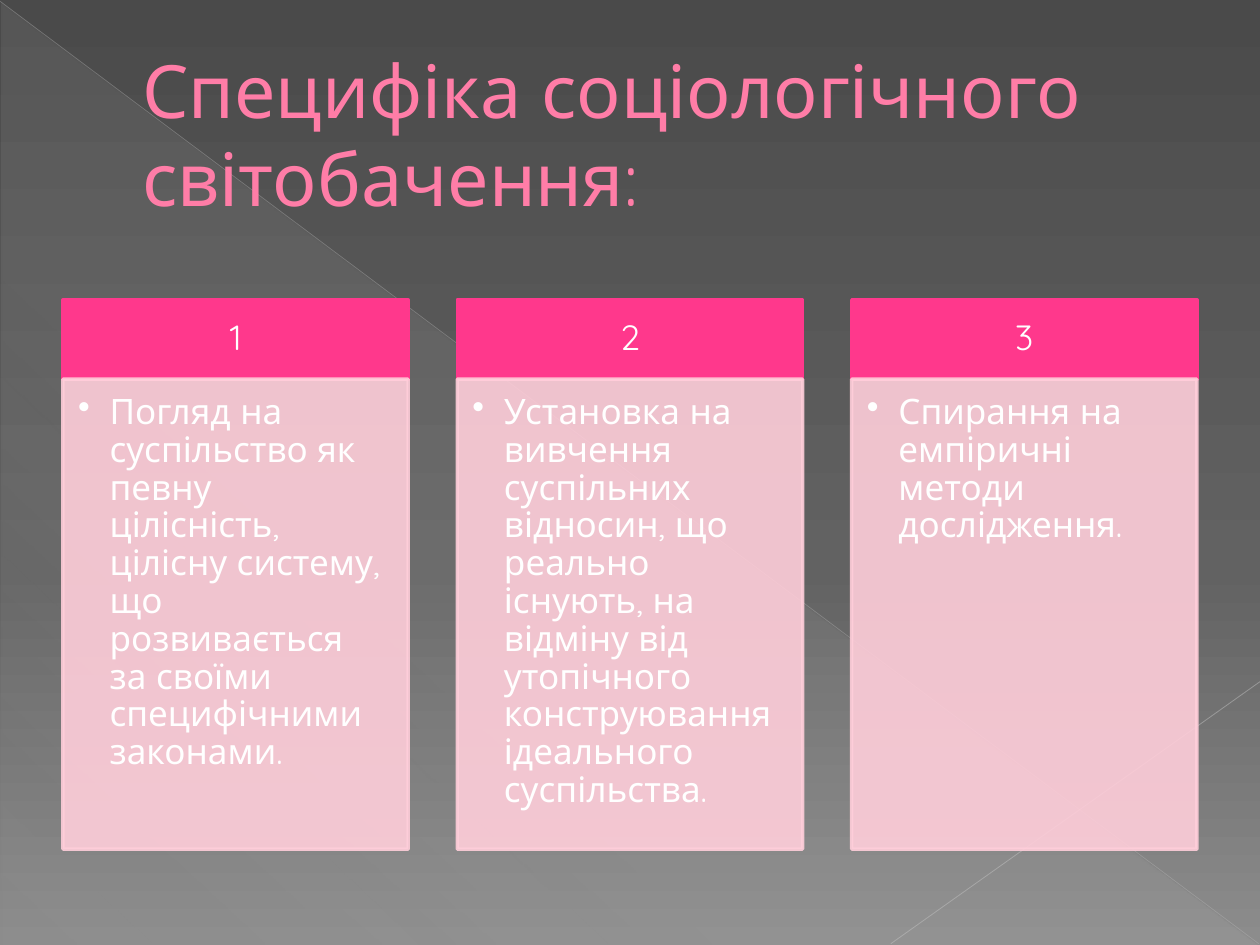
from lxml import etree
from pptx import Presentation
from pptx.dml.color import RGBColor
from pptx.enum.shapes import MSO_CONNECTOR, MSO_SHAPE
from pptx.enum.text import MSO_ANCHOR, PP_ALIGN
from pptx.oxml.ns import qn
from pptx.util import Inches, Pt

RECT, TRI = MSO_SHAPE.RECTANGLE, MSO_SHAPE.RIGHT_TRIANGLE
LINE = MSO_CONNECTOR.STRAIGHT
MID, TOP = MSO_ANCHOR.MIDDLE, MSO_ANCHOR.TOP
LEFT, CENTER = PP_ALIGN.LEFT, PP_ALIGN.CENTER

TITLE = "Специфіка соціологічного світобачення:"
CARDS = [
    ("1", "Погляд на суспільство як певну цілісність, цілісну систему, "
          "що розвивається за своїми специфічними законами."),
    ("2", "Установка на вивчення суспільних відносин, що реально існують, "
          "на відміну від утопічного конструювання ідеального суспільства."),
    ("3", "Спирання на емпіричні методи дослідження."),
]
BACK = [(0, "4A4A4A", 100), (60, "626262", 100), (100, "8C8C8C", 100)]
SHADE = [(0, "D2D2D2", 10), (70, "D2D2D2", 8), (100, "D2D2D2", 1)]
RAYS = [
    ((0, 0.01, 9.99, 7.49), "BFBFBF", 0.39, 35),
    ((10, 5.41, 7.07, 7.49), "C6C6C6", 0.47, 45),
]
FONT = "Quicksand"
W, H = 10, 7.5
EDGE, WIDE = 0.5, 2.74
STEP = (W - 2 * EDGE - WIDE) / (len(CARDS) - 1)
HEAD_Y, HEAD_H, BODY_H = 2.38, 0.63, 3.73


def rgb(code):
    return RGBColor.from_string(code)


def fade(node, share):
    for clr in node.iter(qn("a:srgbClr")):
        etree.SubElement(clr, qn("a:alpha"), val=str(share * 1000))


def blend(fill, root, stops, angle):
    fill.gradient()
    grad = root.find(".//" + qn("a:gradFill"))
    for part in list(grad):
        grad.remove(part)
    group = etree.SubElement(grad, qn("a:gsLst"))
    for pos, code, share in stops:
        stop = etree.SubElement(group, qn("a:gs"), pos=str(pos * 1000))
        etree.SubElement(stop, qn("a:srgbClr"), val=code)
        fade(stop, share)
    etree.SubElement(grad, qn("a:lin"), ang=str(angle * 60000), scaled="0")


def write(shape, text, size, code, align, anchor, pads):
    frame = shape.text_frame
    frame.word_wrap = True
    frame.vertical_anchor = anchor
    (frame.margin_left, frame.margin_top,
     frame.margin_right, frame.margin_bottom) = map(Inches, pads)
    para = frame.paragraphs[0]
    para.text = text
    para.alignment = align
    para.font.name = FONT
    para.font.size = Pt(size)
    para.font.color.rgb = rgb(code)
    return para


def indent(para, left, first):
    props = para._p.get_or_add_pPr()
    props.set("marL", str(Inches(left)))
    props.set("indent", str(Inches(first)))
    return props


def box(slide, x, y, high, code, share=100):
    shape = slide.shapes.add_shape(RECT, *map(Inches, (x, y, WIDE, high)))
    shape.shadow.inherit = False
    shape.fill.solid()
    shape.fill.fore_color.rgb = rgb(code)
    shape.line.color.rgb = rgb(code)
    shape.line.width = Pt(2)
    if share < 100:
        fade(shape._element.spPr, share)
    return shape


def card(slide, x, label, text):
    head = box(slide, x, HEAD_Y, HEAD_H, "FF388C")
    para = write(head, label, 20, "FFFFFF", CENTER, MID,
                 (0.16, 0.09, 0.16, 0.09))
    para.line_spacing = 0.9
    body = box(slide, x, HEAD_Y + HEAD_H, BODY_H, "FFCEDA", 90)
    para = write(body, text, 20, "FFFFFF", LEFT, TOP,
                 (0.12, 0.12, 0.16, 0.17))
    para.line_spacing = 0.9
    props = indent(para, 0.25, -0.25)
    mark = etree.Element(qn("a:buChar"), char="•")
    props.find(qn("a:lnSpc")).addnext(mark)


def main():
    deck = Presentation()
    deck.slide_width, deck.slide_height = Inches(W), Inches(H)
    slide = deck.slides.add_slide(deck.slide_layouts[6])
    blend(slide.background.fill, slide.element, BACK, 90)

    tri = slide.shapes.add_shape(TRI, *map(Inches, (0.01, 0.02, 9.98, 7.48)))
    tri.shadow.inherit = False
    tri.line.fill.background()
    blend(tri.fill, tri._element, SHADE, 133)

    for ends, code, width, share in RAYS:
        ray = slide.shapes.add_connector(LINE, *map(Inches, ends))
        ray.line.color.rgb = rgb(code)
        ray.line.width = Pt(width)
        fade(ray._element.spPr, share)
        etree.SubElement(ray._element.spPr, qn("a:effectLst"))

    title = slide.shapes.add_textbox(
        *map(Inches, (EDGE, 0.29, W - 2 * EDGE, 1.53)))
    para = write(title, TITLE, 42, "FF7DA7", LEFT, MID, (0.1, 0.05, 0.1, 0.05))
    indent(para, 0.53, 0)

    for col, (label, text) in enumerate(CARDS):
        card(slide, EDGE + col * STEP, label, text)
    deck.save("out.pptx")


if __name__ == "__main__":
    main()
